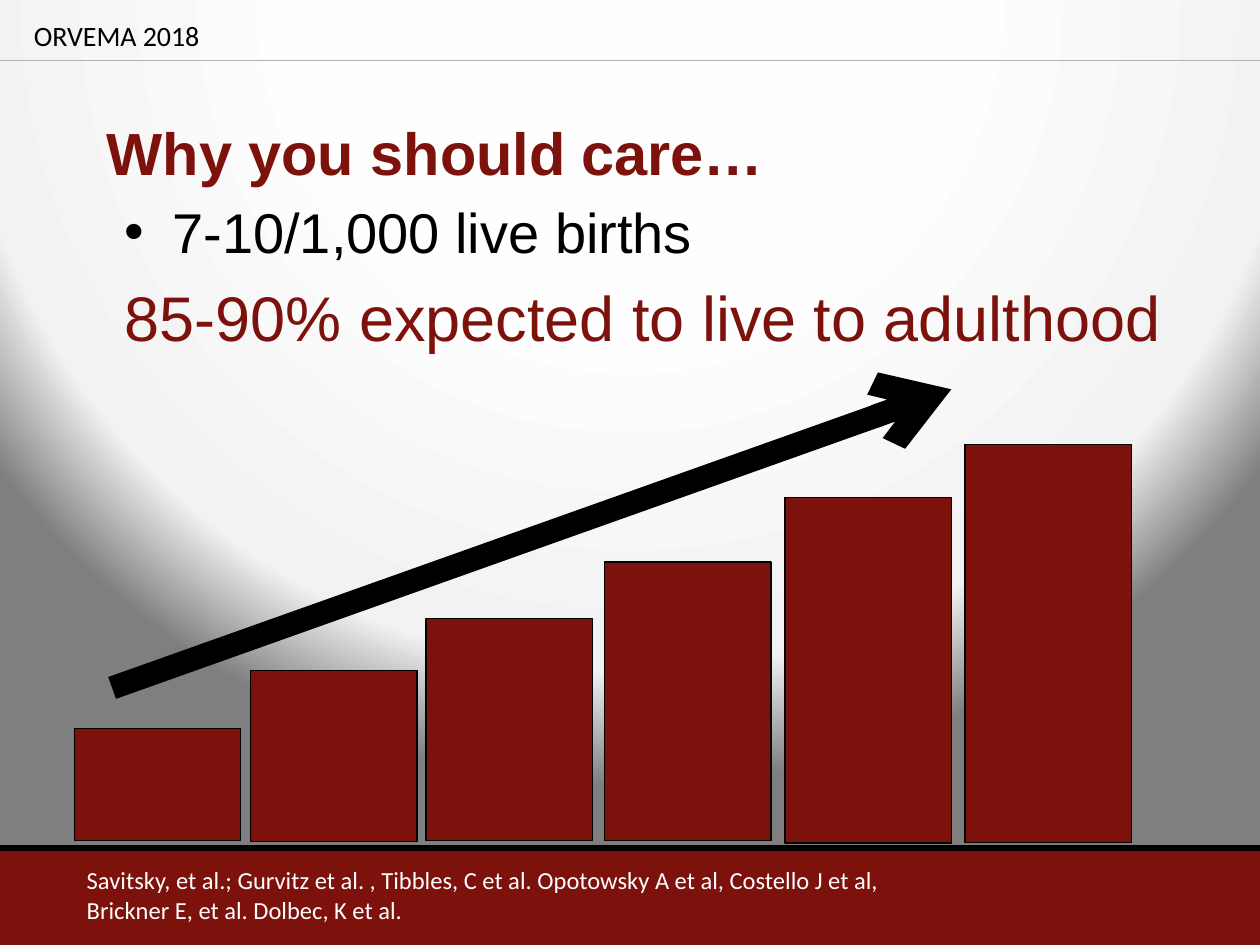
import pptx
import pptx.util
import pptx.dml.color
import pptx.enum.shapes
import pptx.enum.text
import pptx.oxml
import pptx.oxml.ns
from lxml import etree

Inches = pptx.util.Inches
Pt = pptx.util.Pt
RGBColor = pptx.dml.color.RGBColor
qn = pptx.oxml.ns.qn

MAROON = RGBColor(0x7D, 0x11, 0x0C)
BLACK = RGBColor(0, 0, 0)
WHITE = RGBColor(255, 255, 255)
GREY = RGBColor(0xB0, 0xB2, 0xB4)

BACKGROUND_STOPS = [(40, "FEFEFE"), (85, "F2F2F2"), (100, "7F7F7F")]

TEXTS = [
    ("ORVEMA 2018", (0.17, 0.1, 4.42, 0.37),
     dict(size=16, font="Calibri", color=BLACK)),
    ("Why you should care…", (0.75, 0.58, 7.78, 1.25),
     dict(size=34, color=MAROON, bold=True, anchor=pptx.enum.text.MSO_ANCHOR.MIDDLE)),
    ("7-10/1,000 live births", (0.89, 1.52, 9.5, 1.2),
     dict(size=32, color=BLACK, bullet="•", space_before=3)),
    ("Savitsky, et al.; Gurvitz et al. , Tibbles, C et al. Opotowsky A et al, "
     "Costello J et al, Brickner E, et al. Dolbec, K et al.", (0.59, 6.82, 6.9, 0.57),
     dict(size=14, font="Calibri", color=WHITE)),
    ("85-90% expected to live to adulthood", (0.89, 2.16, 9.17, 1.01),
     dict(size=36, color=MAROON)),
]

BAR_WIDTH = 1.32
BARS = [(0.59, 5.78, 0.89), (1.99, 5.32, 1.36), (3.38, 4.91, 1.76),
        (4.8, 4.46, 2.21), (6.23, 3.95, 2.74), (7.66, 3.53, 3.16)]


def set_background(slide):
    slide.background.fill.gradient()
    gradient = slide.element.xpath(".//p:bg//a:gradFill")[0]
    for child in list(gradient):
        gradient.remove(child)
    stops = etree.SubElement(gradient, qn("a:gsLst"))
    for position, color in BACKGROUND_STOPS:
        stop = etree.SubElement(stops, qn("a:gs"), pos=str(position * 1000))
        etree.SubElement(stop, qn("a:srgbClr"), val=color)
    path = etree.SubElement(gradient, qn("a:path"), path="circle")
    etree.SubElement(path, qn("a:fillToRect"), l="50000", t="-80000", r="50000", b="180000")


def add_text(slide, text, box, size, color, font="Arial", bold=False,
             anchor=pptx.enum.text.MSO_ANCHOR.TOP, bullet=None, space_before=0):
    frame = slide.shapes.add_textbox(*map(Inches, box)).text_frame
    frame.word_wrap = True
    frame.vertical_anchor = anchor
    paragraph = frame.paragraphs[0]
    paragraph.space_before = Pt(space_before)
    run = paragraph.add_run()
    run.text = text
    run.font.size = Pt(size)
    run.font.name = font
    run.font.bold = bold
    run.font.color.rgb = color
    if bullet:
        properties = paragraph._p.get_or_add_pPr()
        properties.set("marL", str(Inches(0.38)))
        properties.set("indent", str(Inches(-0.38)))
        etree.SubElement(properties, qn("a:buFont"), typeface="Arial")
        etree.SubElement(properties, qn("a:buChar"), char=bullet)


def add_rectangle(slide, box, outlined=True):
    shape = slide.shapes.add_shape(
        pptx.enum.shapes.MSO_SHAPE.RECTANGLE, *map(Inches, box))
    shape.shadow.inherit = False
    shape.fill.solid()
    shape.fill.fore_color.rgb = MAROON
    if outlined:
        shape.line.color.rgb = BLACK
        shape.line.width = Pt(0.75)
    else:
        shape.line.fill.background()


def add_line(slide, ends, color, width, arrow=False):
    line = slide.shapes.add_connector(
        pptx.enum.shapes.MSO_CONNECTOR.STRAIGHT, *map(Inches, ends))
    line.line.color.rgb = color
    line.line.width = Pt(width)
    if arrow:
        etree.SubElement(line.line._get_or_add_ln(), qn("a:tailEnd"), type="arrow")
    etree.SubElement(line._element.spPr, qn("a:effectLst"))


def main():
    presentation = pptx.Presentation()
    presentation.slide_width = Inches(10)
    presentation.slide_height = Inches(7.5)
    slide = presentation.slides.add_slide(presentation.slide_layouts[6])
    set_background(slide)
    add_rectangle(slide, (0, 6.75, 10, 0.75), outlined=False)
    add_line(slide, (0, 0.48, 10, 0.48), GREY, 0.75)
    add_line(slide, (0, 6.73, 10, 6.73), BLACK, 3.75)
    for text, box, text_format in TEXTS:
        add_text(slide, text, box, **text_format)
    for left, top, height in BARS:
        add_rectangle(slide, (left, top, BAR_WIDTH, height))
    add_line(slide, (0.89, 5.46, 7.55, 3.09), BLACK, 13.25, arrow=True)
    presentation.save("out.pptx")


if __name__ == "__main__":
    main()
